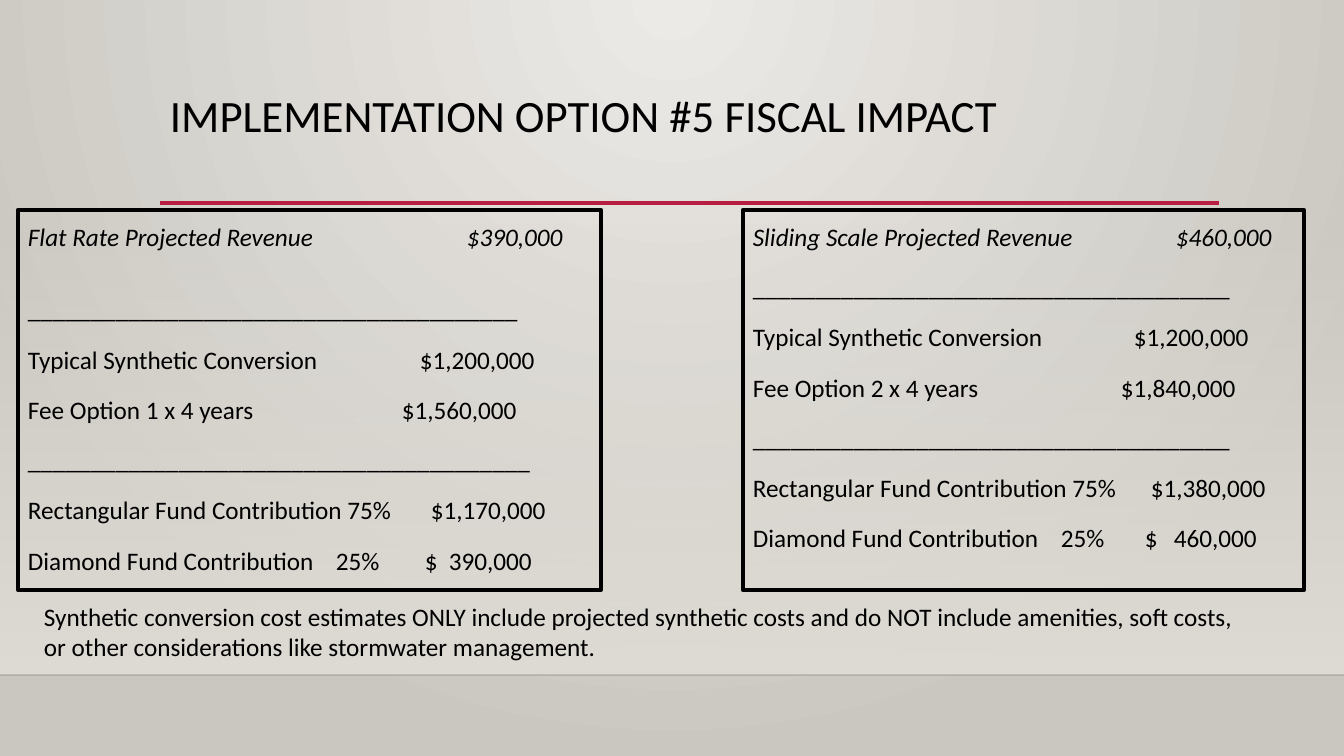
"""Build the fiscal impact slide for implementation option #5."""
from pptx import Presentation
from pptx.dml.color import RGBColor
from pptx.enum.shapes import MSO_CONNECTOR, MSO_SHAPE
from pptx.enum.text import MSO_ANCHOR, PP_ALIGN
from pptx.oxml import parse_xml
from pptx.oxml.ns import nsdecls, qn
from pptx.oxml.xmlchemy import OxmlElement
from pptx.util import Pt

PX = 914400 / 100.8
COLORS = {"ink": "000000", "edge": "000001", "accent": "B71E42",
          "light": "ECEAE7", "dark": "CAC7C1", "band": "DFDBD5"}
RULE = "_"


def gradient(parent, start, end, alpha, direction):
    old = parent.find(qn("a:solidFill"))
    parent.replace(old, parse_xml(
        f'<a:gradFill {nsdecls("a")} rotWithShape="1"><a:gsLst>'
        f'<a:gs pos="0"><a:srgbClr val="{COLORS[start]}"><a:alpha val="{alpha}"/></a:srgbClr></a:gs>'
        f'<a:gs pos="100000"><a:srgbClr val="{COLORS[end]}"/></a:gs>'
        f'</a:gsLst>{direction}</a:gradFill>'))


def write(p, text, size, tabs=(), **spacing):
    p.alignment = PP_ALIGN.LEFT
    for name, value in spacing.items():
        setattr(p, name, value)
    if tabs:
        tab_list = OxmlElement("a:tabLst")
        for pos in tabs:
            tab = OxmlElement("a:tab")
            tab.set("pos", str(int(pos * PX)))
            tab.set("algn", "l")
            tab_list.append(tab)
        p._p.get_or_add_pPr().append(tab_list)
    r = p.add_run()
    r.text = text
    for name, value in {"name": "Calibri", "size": Pt(size)}.items():
        setattr(r.font, name, value)
    r.font.color.rgb = RGBColor.from_string(COLORS["ink"])
    return r


prs = Presentation()
prs.slide_width, prs.slide_height = int(1344 * PX), int(756 * PX)
s = prs.slides.add_slide(prs.slide_layouts[6])

s.background.fill.solid()
gradient(s._element.find(".//" + qn("p:bgPr")), "light", "dark", 100000,
         '<a:path path="circle"><a:fillToRect l="43000" t="0" r="43000" b="100000"/></a:path>')

band = s.shapes.add_shape(MSO_SHAPE.RECTANGLE, 0, *(int(v * PX) for v in (223, 1344, 452)))
band.shadow.inherit = False
band.line.fill.background()
band.fill.solid()
gradient(band._element.spPr, "band", "band", 0, '<a:lin ang="5400000" scaled="0"/>')

for x1, x2, y, color, width, alpha in [(0, 1344, 675, "edge", 1, 20000),
                                       (160, 1219, 203, "accent", 2.5, 100000)]:
    line = s.shapes.add_connector(MSO_CONNECTOR.STRAIGHT,
                                  *(int(v * PX) for v in (x1, y, x2, y)))
    line.line.width = Pt(width)
    line.line.color.rgb = RGBColor.from_string(COLORS[color])
    opacity = OxmlElement("a:alpha")
    opacity.set("val", str(alpha))
    line._element.spPr.find(".//" + qn("a:srgbClr")).append(opacity)
    line._element.spPr.append(OxmlElement("a:effectLst"))

NOTE = ("Synthetic conversion cost estimates ONLY include projected synthetic costs and do NOT "
        "include amenities, soft costs, or other considerations like stormwater management.")
for box, text, size, leading in [
    ((160, 89, 1059, 115), "IMPLEMENTATION OPTION #5 FISCAL IMPACT", 32, 0.9),
    ((34, 596, 1224, 72), NOTE, 18, 1.0),
]:
    tf = s.shapes.add_textbox(*(int(v * PX) for v in box)).text_frame
    tf.word_wrap = True
    write(tf.paragraphs[0], text, size, line_spacing=leading)

panels = [
    ((18, 210, 583, 380), 26, [
        ("Flat Rate Projected Revenue\t$390,000", (439,)),
        (RULE * 39, ()),
        ("Typical Synthetic Conversion\t$1,200,000", (392,)),
        ("Fee Option 1 x 4 years\t$1,560,000", (374,)),
        (RULE * 40, ()),
        ("Rectangular Fund Contribution 75%\t$1,170,000", (403,)),
        ("Diamond Fund Contribution\t25%\t$\t390,000", (308, 397, 421)),
    ]),
    ((743, 210, 561, 380), 10, [
        ("Sliding Scale Projected Revenue\t$460,000", (423,)),
        (RULE * 38, ()),
        ("Typical Synthetic Conversion\t$1,200,000", (381,)),
        ("Fee Option 2 x 4 years\t$1,840,000", (368,)),
        (RULE * 38, ()),
        ("Rectangular Fund Contribution 75%\t$1,380,000", (398,)),
        ("Diamond Fund Contribution\t25%\t$\t460,000", (308, 392, 421)),
    ]),
]
for box, first_gap, rows in panels:
    sp = s.shapes.add_shape(MSO_SHAPE.RECTANGLE, *(int(v * PX) for v in box))
    sp.shadow.inherit = False
    sp.fill.background()
    sp.line.width = Pt(3)
    sp.line.color.rgb = RGBColor.from_string(COLORS["ink"])
    tf = sp.text_frame
    tf.word_wrap = True
    tf.vertical_anchor = MSO_ANCHOR.TOP
    gaps = [0, first_gap] + [10] * (len(rows) - 2)
    for i, ((text, tabs), gap) in enumerate(zip(rows, gaps)):
        p = tf.paragraphs[0] if i == 0 else tf.add_paragraph()
        r = write(p, text, 18, tabs, line_spacing=1.2, space_before=Pt(gap))
        r.font.italic = i == 0

prs.save("out.pptx")
